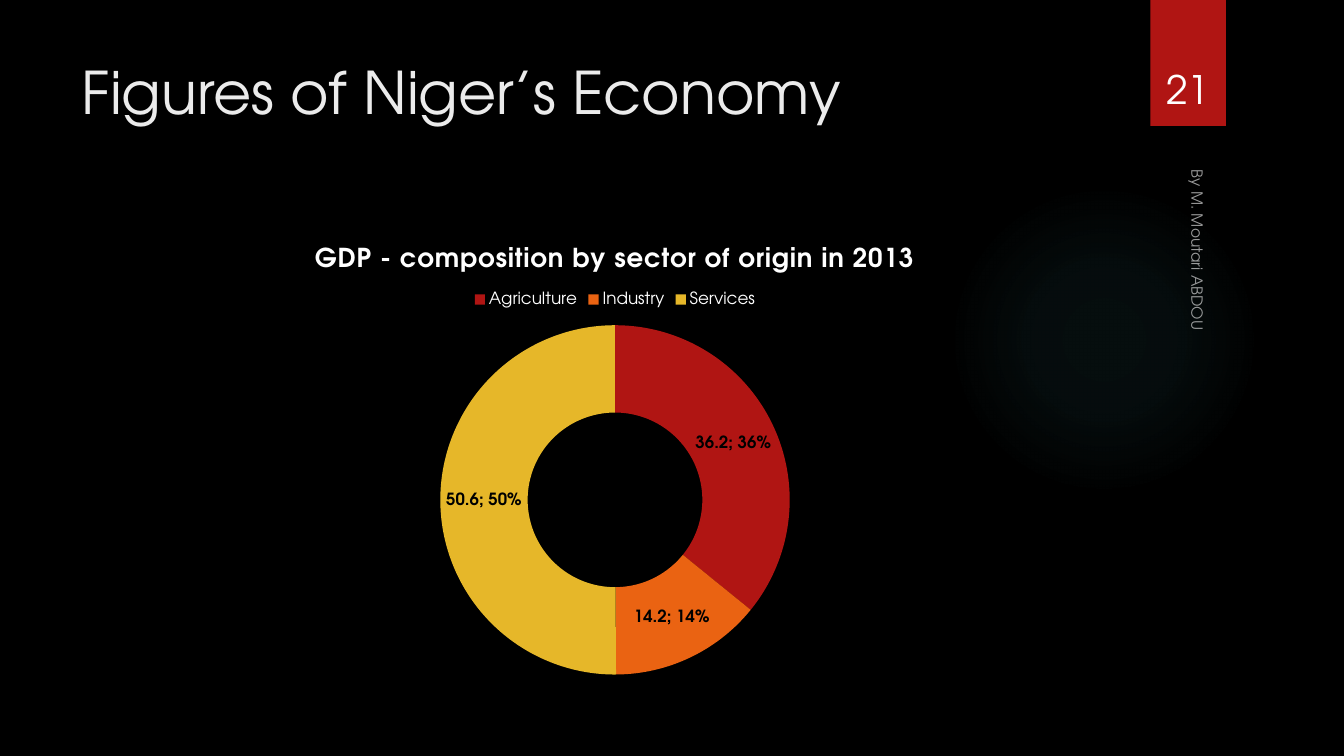
from dataclasses import dataclass

from lxml import etree
from pptx import Presentation
from pptx.chart.data import CategoryChartData
from pptx.dml.color import RGBColor
from pptx.enum import chart as charts, shapes, text
from pptx.oxml import parse_xml
from pptx.oxml.ns import nsdecls, qn
from pptx.util import Inches, Pt


@dataclass(frozen=True)
class Theme:
    face: str = "TeX Gyre Adventor"
    back: str = "000000"
    white: str = "FFFFFF"
    head: str = "EBEBEB"
    red: str = "B01513"
    orange: str = "EA6312"
    gold: str = "E6B729"
    glow: str = "50B9C1"
    title: float = 42
    number: float = 28
    caption: float = 18.6
    label: float = 12
    base: float = 10
    foot: float = 11


THEME = Theme()
CAPTION = "GDP - composition by sector of origin in 2013"
SECTORS = [
    ("Agriculture", 36.2, THEME.red),
    ("Industry", 14.2, THEME.orange),
    ("Services", 50.6, THEME.gold),
]


def rgb(color):
    return RGBColor.from_string(color)


def style(font, size, color, bold=False):
    for key, value in dict(name=THEME.face, size=Pt(size), bold=bold).items():
        setattr(font, key, value)
    font.color.rgb = rgb(color)


def paint(fill, color):
    fill.solid()
    fill.fore_color.rgb = rgb(color)


def add_shape(slide, kind, box, color):
    shape = slide.shapes.add_shape(kind, *map(Inches, box))
    shape.shadow.inherit = False
    shape.line.fill.background()
    paint(shape.fill, color)
    return shape


def add_glow(slide, box):
    """Add a circle that fades out from its centre."""
    glow = add_shape(slide, shapes.MSO_SHAPE.OVAL, box, THEME.glow)
    stops = "".join(
        f'<a:gs pos="{pos * 1000}"><a:srgbClr val="{THEME.glow}">'
        f'<a:alpha val="{alpha * 1000}"/></a:srgbClr></a:gs>'
        for pos, alpha in [(0, 7), (36, 6), (69, 0), (100, 0)]
    )
    grad = parse_xml(
        f'<a:gradFill {nsdecls("a")}><a:gsLst>{stops}</a:gsLst>'
        '<a:path path="circle"><a:fillToRect l="50000" t="50000" '
        'r="50000" b="50000"/></a:path></a:gradFill>'
    )
    props = glow._element.spPr
    props.replace(props.find(qn("a:solidFill")), grad)


def add_text(slide, words, box, size, color, anchor=text.MSO_ANCHOR.BOTTOM,
             align=text.PP_ALIGN.LEFT, turn=0, alpha=None):
    shape = slide.shapes.add_textbox(*map(Inches, box))
    shape.rotation = turn
    frame = shape.text_frame
    frame.word_wrap = True
    frame.vertical_anchor = anchor
    para = frame.paragraphs[0]
    para.alignment = align
    run = para.add_run()
    run.text = words
    style(run.font, size, color)
    if alpha is not None:
        tint = run._r.rPr.find(".//" + qn("a:srgbClr"))
        etree.SubElement(tint, qn("a:alpha")).set("val", str(alpha * 1000))


def add_ring(slide, box):
    names, values, colors = zip(*SECTORS)
    data = CategoryChartData()
    data.categories = names
    data.add_series(CAPTION, values)
    chart = slide.shapes.add_chart(
        charts.XL_CHART_TYPE.DOUGHNUT, *map(Inches, box), data).chart
    style(chart.font, THEME.base, THEME.white)

    chart.has_title = True
    run = chart.chart_title.text_frame.paragraphs[0].add_run()
    run.text = CAPTION
    style(run.font, THEME.caption, THEME.white, bold=True)
    run._r.rPr.set("spc", "50")

    chart.has_legend = True
    chart.legend.position = charts.XL_LEGEND_POSITION.TOP
    chart.legend.include_in_layout = False
    style(chart.legend.font, THEME.label, THEME.white)

    plot = chart.plots[0]
    plot.vary_by_categories = True
    for index, color in enumerate(colors):
        form = plot.series[0].points[index].format
        paint(form.fill, color)
        form.line.fill.background()

    labels = plot.series[0].data_labels
    for key in ("show_value", "show_percentage"):
        setattr(labels, key, True)
    style(labels.font, THEME.label, THEME.back, bold=True)
    mark = etree.Element(qn("c:separator"))
    mark.text = "; "
    labels._element.find(qn("c:showBubbleSize")).addnext(mark)


def main():
    deck = Presentation()
    deck.slide_width, deck.slide_height = Inches(13.33), Inches(7.5)
    slide = deck.slides.add_slide(deck.slide_layouts[6])
    paint(slide.background.fill, THEME.back)

    add_glow(slide, (9.41, 1.83, 3.08, 3.08))
    add_shape(slide, shapes.MSO_SHAPE.RECTANGLE, (11.41, 0, 0.75, 1.25), THEME.red)
    add_text(slide, "Figures of Niger’s Economy", (0.71, 0.5, 10.29, 1.53),
             THEME.title, THEME.head, anchor=text.MSO_ANCHOR.TOP)
    add_ring(slide, (1.21, 2.24, 9.78, 4.59))
    add_text(slide, "By M. Moutari ABDOU", (9.79, 3.53, 4.22, 0.33),
             THEME.foot, THEME.white, turn=90, alpha=60)
    add_text(slide, "21", (11.32, 0.32, 0.92, 0.84), THEME.number, THEME.white,
             align=text.PP_ALIGN.CENTER)
    deck.save("out.pptx")


if __name__ == "__main__":
    main()
